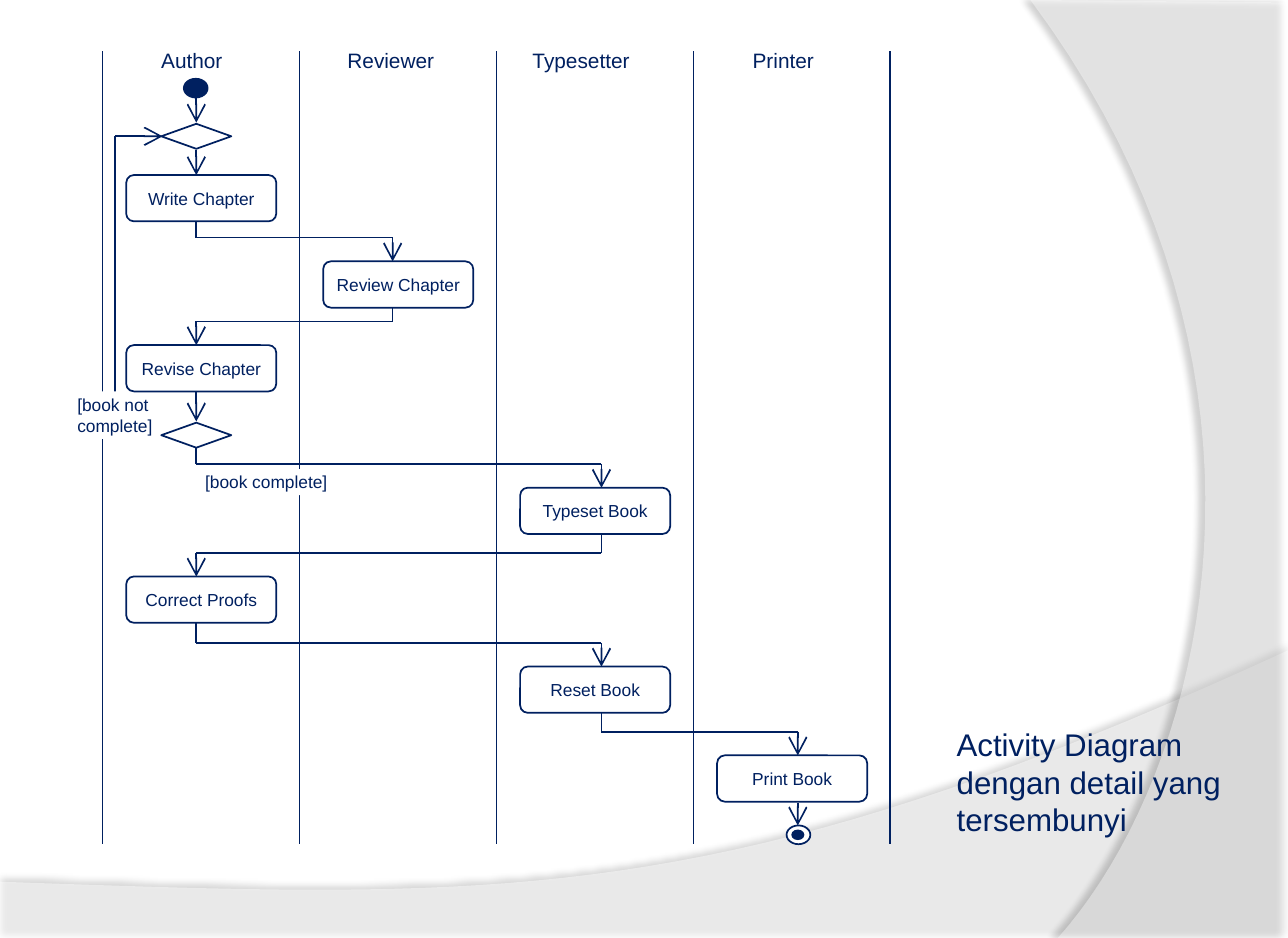
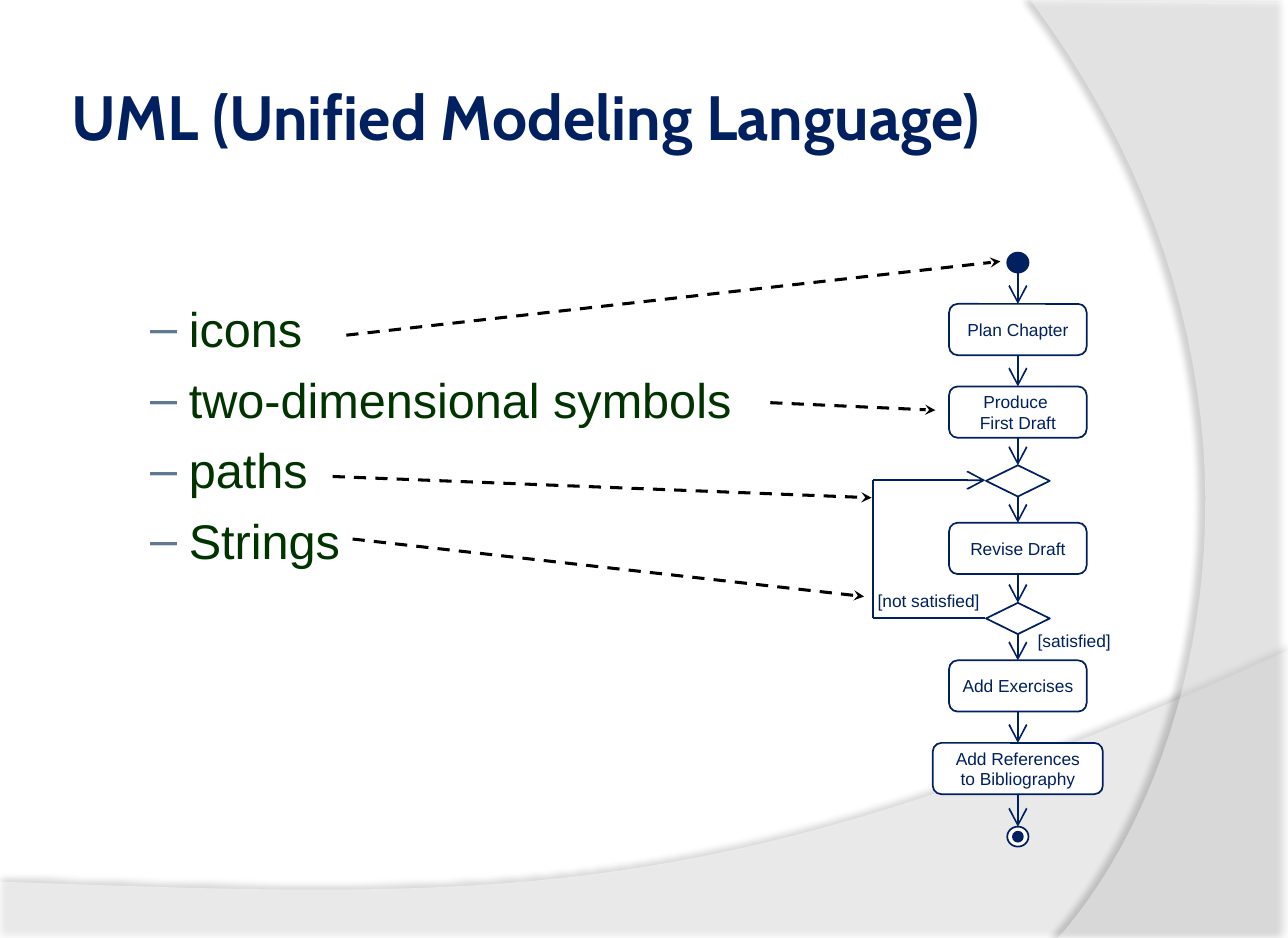
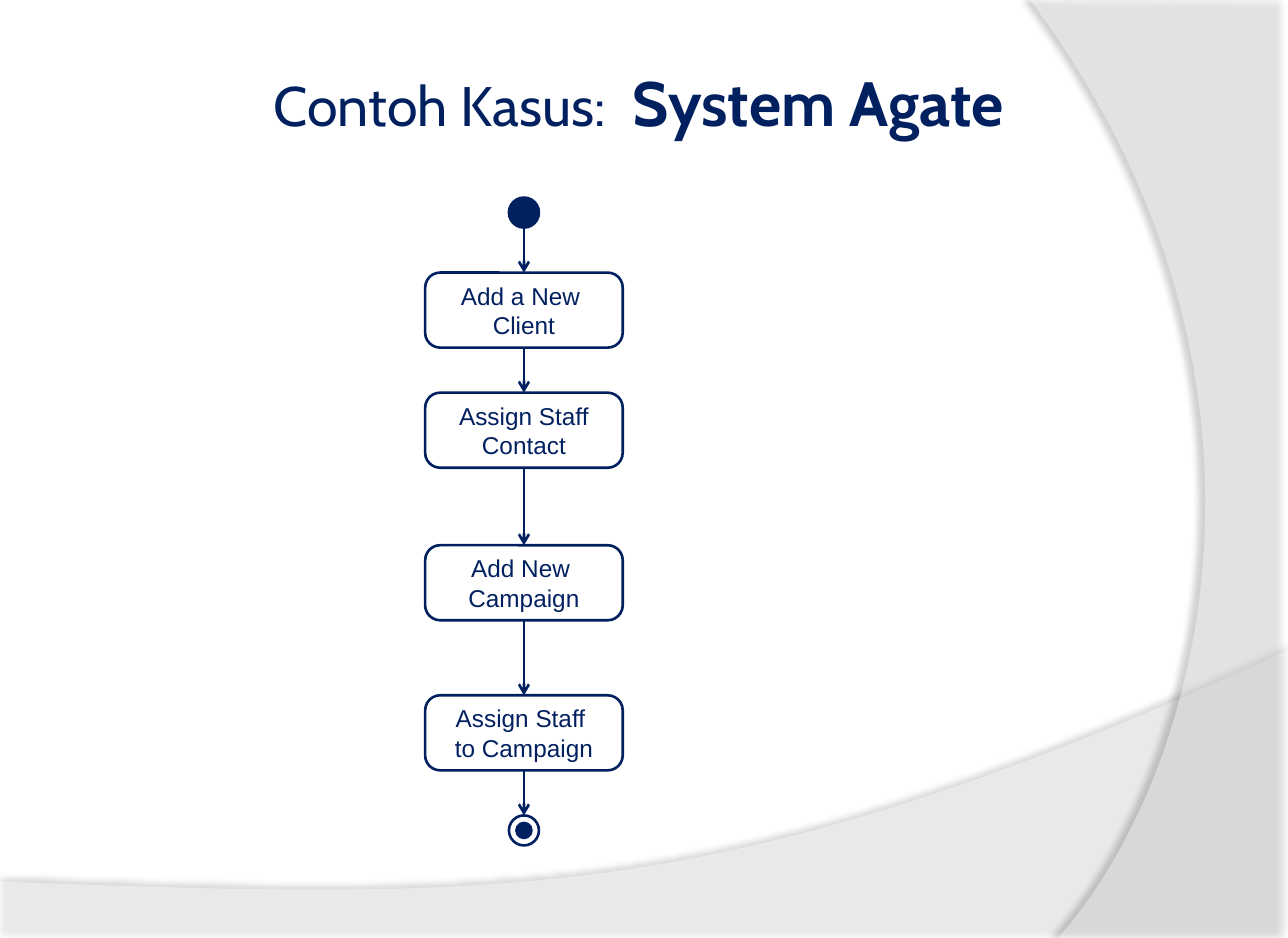
from dataclasses import dataclass
from itertools import pairwise

from lxml.etree import SubElement
from pptx import Presentation
from pptx.dml.color import RGBColor
from pptx.enum.dml import MSO_LINE
from pptx.enum.shapes import MSO_CONNECTOR, MSO_SHAPE
from pptx.enum.text import MSO_ANCHOR, MSO_AUTO_SIZE, PP_ALIGN
from pptx.oxml.ns import qn
from pptx.util import Inches, Pt


@dataclass(frozen=True)
class Theme:
    navy: RGBColor = RGBColor.from_string("002060")
    green: RGBColor = RGBColor.from_string("003300")
    black: RGBColor = RGBColor.from_string("000000")
    paper: RGBColor = RGBColor.from_string("FFFFFF")
    dash: str = "5F7791"
    body: str = "Arial"
    head: str = "Cabin"
    tiny: int = 10
    lane: int = 12
    step: int = 14
    note: int = 18
    list: int = 28
    lead: int = 32
    title: int = 36


T = Theme()
W, H = 10.3, 7.5
BOX, OVAL, GEM = MSO_SHAPE.ROUNDED_RECTANGLE, MSO_SHAPE.OVAL, MSO_SHAPE.DIAMOND


def node(shapes, box, text="", kind=BOX, fill=T.paper, size=T.tiny, weight=1):
    """Add a diagram symbol, or a plain label when kind is None."""
    place = [Inches(v) for v in box]
    if kind is None:
        shape = shapes.add_textbox(*place)
    else:
        shape = shapes.add_shape(kind, *place)
        shape.shadow.inherit = False
        shape.line.color.rgb = T.navy
        shape.line.width = Pt(weight)
    if fill is not None:
        shape.fill.solid()
        shape.fill.fore_color.rgb = fill
    if text:
        frame = shape.text_frame
        frame.word_wrap = kind is None
        frame.vertical_anchor = MSO_ANCHOR.TOP if kind is None else MSO_ANCHOR.MIDDLE
        for i, part in enumerate(text.split("\n")):
            para = frame.add_paragraph() if i else frame.paragraphs[0]
            para.alignment = PP_ALIGN.LEFT if kind is None else PP_ALIGN.CENTER
            run = para.add_run()
            run.text = part
            run.font.size, run.font.name = Pt(size), T.body
            run.font.color.rgb = T.navy
    return shape


def link(shapes, start, end, head="", color=T.navy, weight=1, dash=None):
    ends = [Inches(v) for v in (*start, *end)]
    line = shapes.add_connector(MSO_CONNECTOR.STRAIGHT, *ends)
    line.line.color.rgb = color
    line.line.width = Pt(weight)
    if dash:
        line.line.dash_style = dash
    props = line.element.spPr
    if head:
        big = "lg" if weight == 1 else "med"
        SubElement(props.find(qn("a:ln")), qn("a:tailEnd"), type=head, w=big, len=big)
    SubElement(props, qn("a:effectLst"))
    return line


deck = Presentation()
deck.slide_width, deck.slide_height = Inches(W), Inches(H)
lanes, uml, case = [deck.slides.add_slide(deck.slide_layouts[i]) for i in (5, 1, 5)]

# Curved bands on the master: points before the curve, its four controls, shadow
bands = [
    ([(0, 7.51), (W, 7.51)], [(W, 5.2), (5.76, 7.29), (4.02, 7.19), (0, 7.05)],
     45, 35, 3.5, 270),
    ([(W, 0.02), (W, H)], [(8.46, H), (9.63, 6.19), (10.48, 3), (8.24, 0)],
     40, 45, 4, 180),
]
for i, (edge, curve, clear, dark, away, angle) in enumerate(bands):
    points = list(edge)
    for n in range(41):
        t = n / 40
        mix = ((1 - t) ** 3, 3 * t * (1 - t) ** 2, 3 * t * t * (1 - t), t ** 3)
        points.append(tuple(sum(m * p[k] for m, p in zip(mix, curve)) for k in (0, 1)))
    points = [(Inches(x), Inches(y)) for x, y in points]
    pen = lanes.shapes.build_freeform(*points[0])
    pen.add_line_segments(points[1:], close=True)
    band = pen.convert_to_shape()
    band.fill.solid()
    band.fill.fore_color.rgb = T.paper
    band.line.fill.background()
    band.shadow.inherit = False
    props = band.element.spPr
    SubElement(props.find(".//" + qn("a:srgbClr")), qn("a:alpha"), val=str(clear * 1000))
    shade = SubElement(props.find(qn("a:effectLst")), qn("a:outerShdw"),
                       blurRad=str(Pt(4)), dist=str(Pt(away)), dir=str(angle * 60000),
                       algn="ctr", rotWithShape="0")
    tint = SubElement(shade, qn("a:srgbClr"), val="000000")
    SubElement(tint, qn("a:alpha"), val=str(dark * 1000))
    band.element.nvSpPr.cNvPr.set("id", str(20 + i))
    deck.slide_master.shapes.element.insert(2 + i, band.element)

# Titles
titles = [
    (lanes, (7.55, 5.75, 2.4, 1.01), MSO_ANCHOR.TOP, PP_ALIGN.LEFT, 0.1,
     [("Activity Diagram dengan detail yang tersembunyi", T.note, T.body, False)]),
    (uml, (0.52, 0.3, 9.18, 1.25), MSO_ANCHOR.MIDDLE, PP_ALIGN.LEFT, 0.05,
     [("UML (Unified Modeling Language)", T.title, T.head, True)]),
    (case, (0.52, 0.3, 9.18, 1.03), MSO_ANCHOR.MIDDLE, PP_ALIGN.CENTER, 0.05,
     [("Contoh Kasus: ", T.lead, T.head, False),
      (" System Agate", T.title, T.head, True)]),
]
for slide, box, anchor, align, inset, runs in titles:
    title = slide.shapes.title
    title.left, title.top, title.width, title.height = [Inches(v) for v in box]
    frame = title.text_frame
    frame.auto_size, frame.vertical_anchor = MSO_AUTO_SIZE.NONE, anchor
    frame.margin_left = frame.margin_right = Inches(inset)
    frame.margin_top = frame.margin_bottom = Inches(0.05)
    para = frame.paragraphs[0]
    para.alignment = align
    for text, size, face, bold in runs:
        run = para.add_run()
        run.text = text
        run.font.size, run.font.name, run.font.bold = Pt(size), face, bold
        run.font.color.rgb = T.navy

# Swimlanes and the path back to the start
pitch, first, top, foot = 1.575, 0.82, 0.41, 6.75
cols = (1.57, 3.14, 4.81, 6.38)
for i in range(5):
    x = first + i * pitch
    link(lanes.shapes, (x, top), (x, foot))
link(lanes.shapes, (0.92, 3.48), (0.92, 1.09))
link(lanes.shapes, (0.92, 1.09), (1.3, 1.09), "arrow")

labels = [
    (lanes, (1.19, 0.33, 0.75, 0.3), "Author", T.lane, None),
    (lanes, (2.68, 0.33, 0.95, 0.3), "Reviewer", T.lane, None),
    (lanes, (4.16, 0.33, 1.05, 0.3), "Typesetter", T.lane, None),
    (lanes, (5.92, 0.33, 0.75, 0.3), "Printer", T.lane, None),
    (lanes, (1.64, 3.75, 1.39, 0.21), "[book complete]", T.tiny, T.paper),
    (lanes, (0.52, 3.13, 0.96, 0.38), "[book not\ncomplete]", T.tiny, T.paper),
    (uml, (8.2, 4.99, 0.93, 0.27), "[satisfied]", T.tiny, None),
    (uml, (6.92, 4.67, 1.16, 0.27), "[not satisfied]", T.tiny, None),
]
for slide, box, text, size, fill in labels:
    label = node(slide.shapes, box, text, None, fill, size)
    if fill is not None:
        frame = label.text_frame
        frame.margin_top = frame.margin_bottom = Inches(0.02)
        frame.margin_left = Inches(0 if text == "[book complete]" else 0.1)

# Swimlane steps: lane, top, text
steps = [
    (0, 1.4, "Write Chapter"), (1, 2.09, "Review Chapter"), (0, 2.76, "Revise Chapter"),
    (2, 3.9, "Typeset Book"), (0, 4.61, "Correct Proofs"), (2, 5.33, "Reset Book"),
    (3, 6.04, "Print Book"),
]
tall, rise = 0.37, 0.19
for lane, y, text in steps:
    node(lanes.shapes, (first + 0.19 + lane * pitch, y, 1.2, tall), text)
for y in (0.99, 3.38):
    node(lanes.shapes, (1.29, y, 0.56, 0.2), kind=GEM)
node(lanes.shapes, (1.47, 0.63, 0.19, 0.15), kind=OVAL, fill=T.navy)
for (a, y, text), (b, low, _) in pairwise(steps):
    out = 3.58 if text == "Revise Chapter" else y + tall
    turn = low - rise
    link(lanes.shapes, (cols[a], out), (cols[a], turn))
    link(lanes.shapes, (cols[a], turn), (cols[b], turn))
    link(lanes.shapes, (cols[b], turn), (cols[b], low), "arrow")
for col, y, low in [(0, 0.78, 0.98), (0, 1.2, 1.4), (0, 3.13, 3.37), (3, 6.42, 6.6)]:
    link(lanes.shapes, (cols[col], y), (cols[col], low), "arrow")

# Bullet list
body = uml.placeholders[1]
body.left, body.top, body.width, body.height = [Inches(v) for v in (0.6, 1.75, 8.76, 4.5)]
frame = body.text_frame
frame.auto_size = MSO_AUTO_SIZE.NONE
frame.margin_top = Inches(0.64)
for i, text in enumerate(["icons", "two-dimensional symbols", "paths", "Strings"]):
    para = frame.add_paragraph() if i else frame.paragraphs[0]
    para.level, para.space_before, para.space_after = 1, Pt(0), Pt(7)
    props = para._p.get_or_add_pPr()
    props.set("marL", str(Inches(0.81)))
    props.set("indent", str(Inches(-0.31)))
    SubElement(SubElement(props, qn("a:buClr")), qn("a:srgbClr"), val=T.dash)
    SubElement(props, qn("a:buChar"), char="–")
    run = para.add_run()
    run.text = text
    run.font.size, run.font.name = Pt(T.list), T.body
    run.font.color.rgb = T.green

hints = [((2.77, 2.68), (8, 2.09)), ((6.16, 3.22), (7.48, 3.28)),
         ((2.66, 3.81), (6.97, 3.98)), ((2.82, 4.31), (6.91, 4.77))]
for start, end in hints:
    link(uml.shapes, start, end, "stealth", T.black, 1.75, MSO_LINE.DASH)

# Straight flows: centre, text size, line weight, then kind, top, width, height, text
flows = [
    (uml, 8.14, T.tiny, 1, [
        (OVAL, 2.02, 0.17, 0.16, ""),
        (BOX, 2.43, 1.1, 0.41, "Plan Chapter"),
        (BOX, 3.09, 1.1, 0.41, "Produce \nFirst Draft"),
        (GEM, 3.72, 0.51, 0.25, ""),
        (BOX, 4.18, 1.1, 0.41, "Revise Draft"),
        (GEM, 4.82, 0.51, 0.25, ""),
        (BOX, 5.28, 1.1, 0.41, "Add Exercises"),
        (BOX, 5.94, 1.36, 0.41, "Add References\nto Bibliography"),
        (OVAL, 6.61, 0.17, 0.16, "")]),
    (case, 4.19, T.step, 1.5, [
        (OVAL, 1.58, 0.24, 0.24, ""),
        (BOX, 2.18, 1.58, 0.6, "Add a New \nClient"),
        (BOX, 3.14, 1.58, 0.6, "Assign Staff\nContact"),
        (BOX, 4.36, 1.58, 0.6, "Add New \nCampaign"),
        (BOX, 5.56, 1.58, 0.6, "Assign Staff \nto Campaign"),
        (OVAL, 6.52, 0.24, 0.24, "")]),
]
for slide, mid, size, weight, chain in flows:
    made = []
    for kind, y, wide, high, text in chain:
        fill = T.paper if made else T.navy
        box = (mid - wide / 2, y, wide, high)
        shape = node(slide.shapes, box, text, kind, fill, size, weight)
        if kind == BOX and slide is case:
            shape.adjustments[0] = 0.2
        made.append((shape, kind, y, y + high))
    for (above, kind, _, out), (below, _, into, _) in pairwise(made):
        line = link(slide.shapes, (mid, out), (mid, into), "arrow", weight=weight)
        if kind != OVAL:
            line.begin_connect(above, 2)
        line.end_connect(below, 0)

loop = [(7.88, 4.94), (6.98, 4.94), (6.98, 3.84), (7.88, 3.84)]
for i, (start, end) in enumerate(pairwise(loop)):
    link(uml.shapes, start, end, "arrow" if i == 2 else "")

# End marks: the swimlane ring, then the core of each ring
node(lanes.shapes, (6.29, 6.6, 0.19, 0.15), kind=OVAL)
cores = [(lanes, 6.38, 6.675, 0.09, 0.07, 1), (uml, 8.14, 6.69, 0.08, 0.08, 1),
         (case, 4.19, 6.64, 0.12, 0.12, 1.5)]
for slide, x, y, wide, high, weight in cores:
    box = (x - wide / 2, y - high / 2, wide, high)
    node(slide.shapes, box, kind=OVAL, fill=T.navy, weight=weight)

deck.save("out.pptx")
